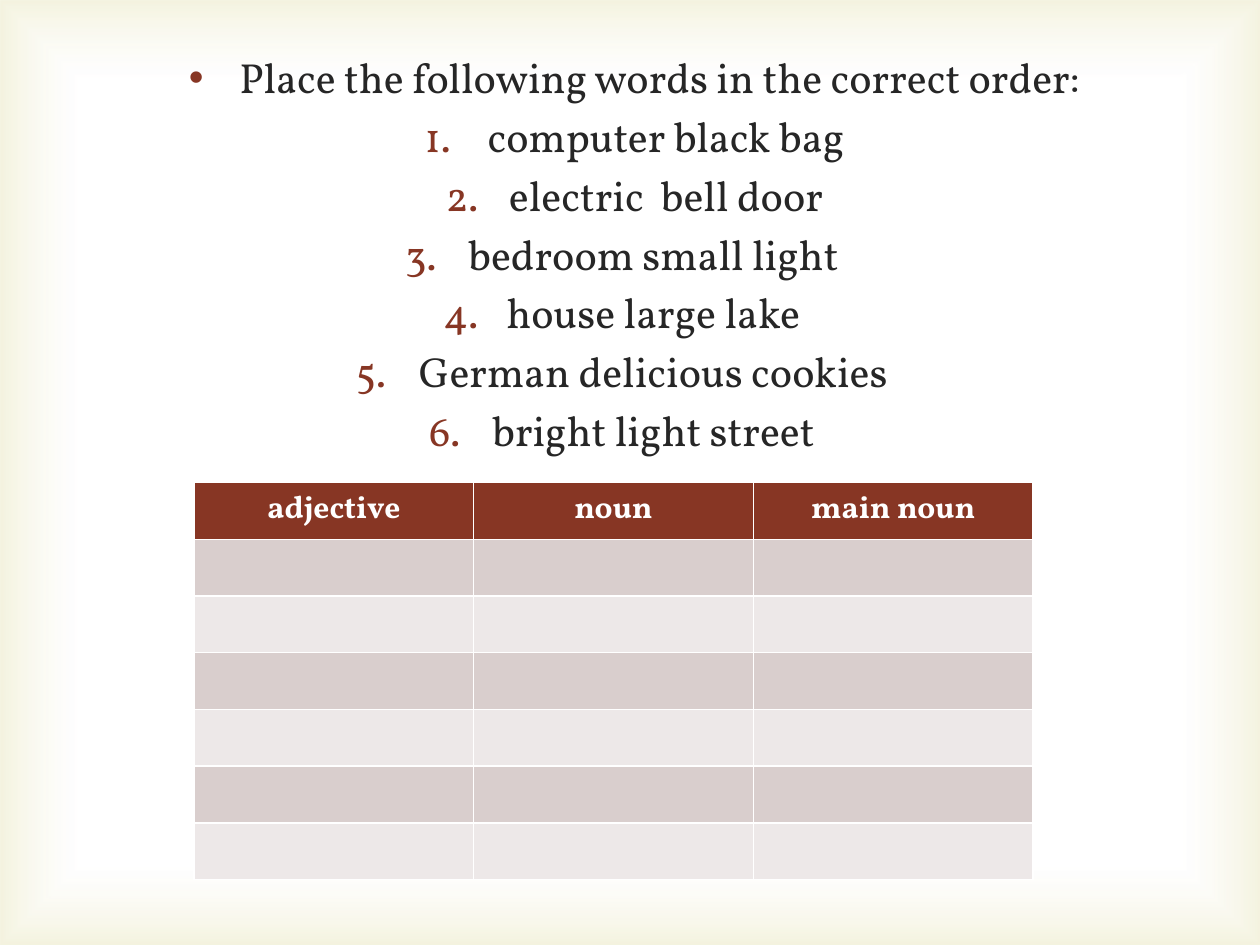
"""Build a word-order exercise slide with an answer table."""
from lxml import etree
from pptx import Presentation
from pptx.dml.color import RGBColor
from pptx.enum import shapes, text
from pptx.oxml import ns
from pptx.util import Inches, Pt

COLORS = {"accent": "873624", "ink": "262626", "white": "FFFFFF",
          "band_dark": "D9CECD", "band_light": "EDE8E8", "glow": "D1CA75"}
FONT = "Vollkorn"


def add_xml(parent, tag, **attributes):
    return etree.SubElement(parent, ns.qn(tag), attributes)


def set_font(paragraph, size, color, bold=False):
    font = paragraph.font
    font.name, font.size, font.bold = FONT, Pt(size), bold
    font.color.rgb = RGBColor.from_string(COLORS[color])


prs = Presentation()
prs.slide_width, prs.slide_height = Inches(10), Inches(7.5)
slide = prs.slides.add_slide(prs.slide_layouts[1])
title = slide.shapes.title
title.element.getparent().remove(title.element)

glow = slide.shapes.add_shape(shapes.MSO_SHAPE.RECTANGLE, 0, 0, prs.slide_width, prs.slide_height)
glow.shadow.inherit = False
glow.line.fill.background()
glow.fill.gradient()
gradient = glow.element.spPr.find(ns.qn("a:gradFill"))
for child in list(gradient):
    gradient.remove(child)
stops = add_xml(gradient, "a:gsLst")
for position, color, opacity in [(83, "white", 11), (100, "glow", 23)]:
    stop = add_xml(stops, "a:gs", pos=str(position * 1000))
    tint = add_xml(stop, "a:srgbClr", val=COLORS[color])
    add_xml(tint, "a:alpha", val=str(opacity * 1000))
center = add_xml(gradient, "a:path", path="rect")
add_xml(center, "a:fillToRect", l="50000", t="50000", r="50000", b="50000")
slide.shapes._spTree.insert(2, glow.element)

exercise = slide.placeholders[1]
exercise.left, exercise.top = Inches(0.35), Inches(0.36)
exercise.width, exercise.height = Inches(9.37), Inches(6.85)
frame = exercise.text_frame
frame.auto_size = text.MSO_AUTO_SIZE.NONE
frame.vertical_anchor = text.MSO_ANCHOR.TOP
lines = ["Place the following words in the correct order:", "computer black bag",
         "electric  bell door", "bedroom small light", "house large lake",
         "German delicious cookies", "bright light street"]
frame.text = "\n".join(lines)
for index, paragraph in enumerate(frame.paragraphs):
    paragraph.alignment = text.PP_ALIGN.CENTER
    props = paragraph._p.get_or_add_pPr()
    indent = Inches(0.5 if index else 0.4)
    props.set("marL", str(indent))
    props.set("indent", str(-indent))
    if paragraph.text == "bedroom small light":
        props.set("marR", str(Inches(0.2)))
    bullet_color = add_xml(props, "a:buClr")
    add_xml(bullet_color, "a:srgbClr", val=COLORS["accent"])
    add_xml(props, "a:buFont", typeface=FONT if index else "Arial")
    if index:
        add_xml(props, "a:buAutoNum", type="arabicPeriod")
    else:
        add_xml(props, "a:buChar", char="•")
    set_font(paragraph, 24, "ink")

headings = ["adjective", "noun", "main noun"]
answers = slide.shapes.add_table(7, len(headings), Inches(1.54), Inches(3.83),
                                 Inches(6.66), Inches(3.15)).table
for column in answers.columns:
    column.width = Inches(2.22)
for row_index, row in enumerate(answers.rows):
    row.height = Inches(0.45)
    band = "accent" if row_index == 0 else "band_dark" if row_index % 2 else "band_light"
    for heading, cell in zip(headings, row.cells):
        cell.fill.solid()
        cell.fill.fore_color.rgb = RGBColor.from_string(COLORS[band])
        if row_index == 0:
            cell.text = heading
            paragraph = cell.text_frame.paragraphs[0]
            paragraph.alignment = text.PP_ALIGN.CENTER
            set_font(paragraph, 18, "white", bold=True)

prs.save("out.pptx")
